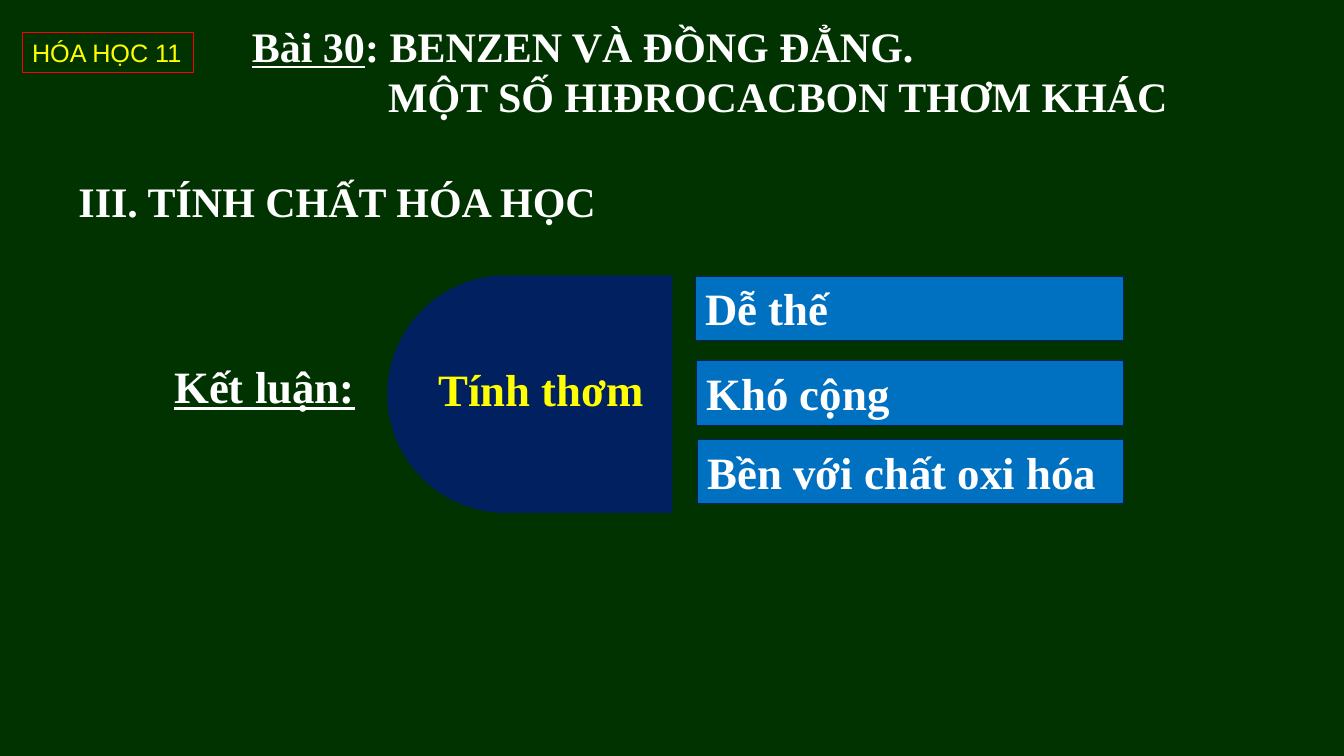
"""Build the chemistry slide that sums up aromatic character."""
from pptx import Presentation
from pptx import util as u
from pptx.dml.color import RGBColor
from pptx.enum import shapes, text

SERIF = "Times New Roman"
WHITE, YELLOW, RED = "FFFFFF", "FFFF00", "FF0000"
GREEN, NAVY, BLUE = "003300", "002060", "0070C0"

COURSE = "HÓA HỌC 11"
TITLE = [[("Bài 30", True), (": BENZEN VÀ ĐỒNG ĐẲNG.", False)],
         [("MỘT SỐ HIĐROCACBON THƠM KHÁC", False)]]
HEADING = "III. TÍNH CHẤT HÓA HỌC"
CONCLUSION = "Kết luận:"
CORE = "Tính thơm"
PROPERTIES = [("Dễ thế", 6.9, 2.74), ("Khó cộng", 6.91, 3.58),
              ("Bền với chất oxi hóa", 6.92, 4.36)]
PROPERTY_RIGHT = 11.14
TITLE_INDENT = 1.35


def paint(target, color):
    target.solid()
    target.fore_color.rgb = RGBColor.from_string(color)


def add_panel(slide, kind, area, line, width, fill=None):
    panel = slide.shapes.add_shape(kind, *map(u.Inches, area))
    panel.shadow.inherit = False
    if fill:
        paint(panel.fill, fill)
    else:
        panel.fill.background()
    paint(panel.line.fill, line)
    panel.line.width = u.Pt(width)
    return panel


def write(box, lines, size=32, font=SERIF, color=WHITE, bold=True, wrap=True,
          align=text.PP_ALIGN.LEFT, spacing=None):
    frame = box.text_frame
    frame.word_wrap = wrap
    frame.auto_size = text.MSO_AUTO_SIZE.SHAPE_TO_FIT_TEXT
    frame.vertical_anchor = text.MSO_ANCHOR.TOP
    for index, runs in enumerate(lines):
        para = frame.add_paragraph() if index else frame.paragraphs[0]
        para.alignment = align
        if spacing:
            para.line_spacing = spacing
        for words, underline in runs:
            span = para.add_run()
            span.text = words
            span.font.name = font
            span.font.size = u.Pt(size)
            span.font.bold = bold
            span.font.underline = underline
            span.font.color.rgb = RGBColor.from_string(color)


def add_text(slide, area, lines, **look):
    box = slide.shapes.add_textbox(*map(u.Inches, area))
    write(box, lines, **look)
    return box


def main():
    deck = Presentation()
    deck.slide_width, deck.slide_height = u.Inches(13.33), u.Inches(7.5)
    slide = deck.slides.add_slide(deck.slide_layouts[6])
    paint(slide.background.fill, GREEN)
    rectangle = shapes.MSO_SHAPE.RECTANGLE

    for words, left, top in PROPERTIES:
        area = (left, top, PROPERTY_RIGHT - left, 0.64)
        bar = add_panel(slide, rectangle, area, NAVY, 0.75, BLUE)
        write(bar, [[(words, False)]])

    dome = add_panel(slide, shapes.MSO_SHAPE.ROUND_2_SAME_RECTANGLE,
                     (4.09, 2.51, 2.33, 2.8), NAVY, 2, NAVY)
    dome.adjustments[0], dome.adjustments[1] = 0.5, 0
    dome.rotation = 270
    add_text(slide, (4.23, 3.54, 2.28, 0.64), [[(CORE, False)]],
             color=YELLOW, align=text.PP_ALIGN.CENTER)
    add_text(slide, (1.63, 3.51, 2.29, 0.64), [[(CONCLUSION, True)]])

    badge = add_panel(slide, rectangle, (0.22, 0.32, 1.7, 0.4), RED, 0.75)
    write(badge, [[(COURSE, False)]], size=18, font="Arial", color=YELLOW,
          bold=False, wrap=False)
    add_text(slide, (0.68, 1.44, 5.49, 0.77), [[(HEADING, False)]],
             size=30, wrap=False, spacing=1.5)

    title = add_text(slide, (2.4, 0.15, 9.59, 1.11), TITLE, size=30)
    second_line = title.text_frame.paragraphs[1]
    second_line._p.get_or_add_pPr().set("marL", str(u.Inches(TITLE_INDENT)))

    deck.save("out.pptx")


if __name__ == "__main__":
    main()
